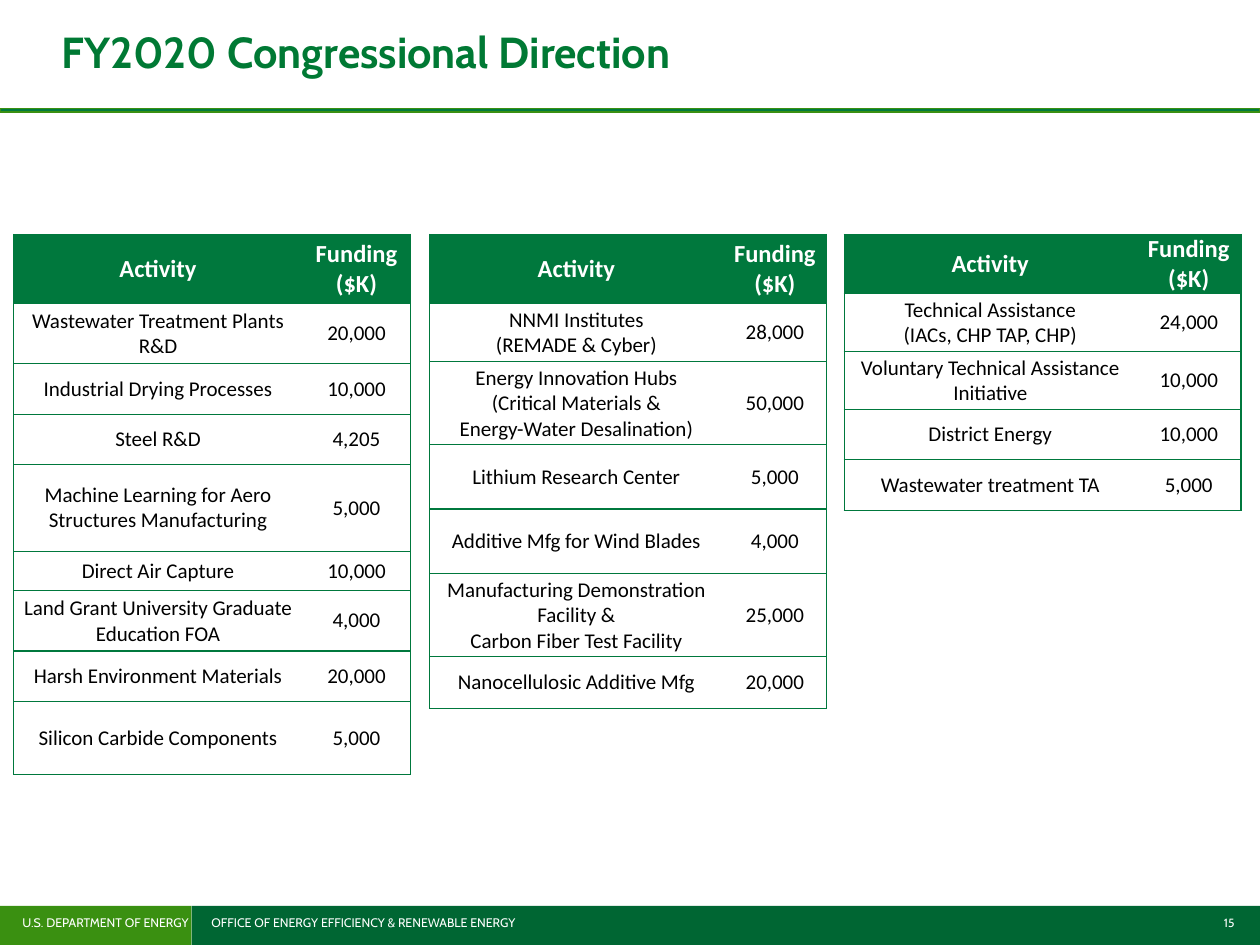
from lxml.etree import SubElement
from pptx import Presentation
from pptx.dml.color import RGBColor
from pptx.enum.shapes import MSO_SHAPE
from pptx.enum.text import MSO_ANCHOR, PP_ALIGN
from pptx.oxml.ns import qn
from pptx.util import Inches, Pt

WHITE = RGBColor(0xFF, 0xFF, 0xFF)
BLACK = RGBColor(0, 0, 0)
TITLE_GREEN = RGBColor(0x00, 0x79, 0x34)
TABLE_GREEN = RGBColor(0x00, 0x78, 0x3D)
RULE_GREEN = RGBColor(0x01, 0x7A, 0x3E)
DARK_GREEN = RGBColor(0x00, 0x66, 0x33)
LIGHT_GREEN = RGBColor(0x3A, 0x90, 0x11)

HEADER = ("Activity", "Funding\n($K)")
# Each table: left, column widths, header margins, body margins, header height, rows
TABLES = [
    (0.11, (2.29, 0.86), (0.08, 0.04), (0.08, 0.04), 0.53, [
        ("Wastewater Treatment Plants R&D", "20,000", 0.48),
        ("Industrial Drying Processes", "10,000", 0.4),
        ("Steel R&D", "4,205", 0.4),
        ("Machine Learning for Aero Structures Manufacturing", "5,000", 0.69),
        ("Direct Air Capture", "10,000", 0.31),
        ("Land Grant University Graduate Education FOA", "4,000", 0.48),
        ("Harsh Environment Materials", "20,000", 0.4),
        ("Silicon Carbide Components", "5,000", 0.58),
    ]),
    (3.41, (2.33, 0.82), (0, 0), (0.06, 0.03), 0.55, [
        ("NNMI Institutes\n(REMADE & Cyber)", "28,000", 0.46),
        ("Energy Innovation Hubs\n(Critical Materials &\nEnergy-Water Desalination)", "50,000", 0.66),
        ("Lithium Research Center", "5,000", 0.51),
        ("Additive Mfg for Wind Blades", "4,000", 0.51),
        ("Manufacturing Demonstration Facility &\nCarbon Fiber Test Facility", "25,000", 0.66),
        ("Nanocellulosic Additive Mfg", "20,000", 0.41),
    ]),
    (6.7, (2.32, 0.83), (0, 0), (0.06, 0.03), 0.47, [
        ("Technical Assistance\n(IACs, CHP TAP, CHP)", "24,000", 0.46),
        ("Voluntary Technical Assistance\nInitiative", "10,000", 0.46),
        ("District Energy", "10,000", 0.4),
        ("Wastewater treatment TA", "5,000", 0.4),
    ]),
]


def add_label(text, left, top, width, height, size, color):
    box = slide.shapes.add_textbox(Inches(left), Inches(top), Inches(width), Inches(height))
    frame = box.text_frame
    frame.word_wrap = True
    frame.text = text
    font = frame.paragraphs[0].runs[0].font
    font.name, font.size, font.color.rgb = "Cabin", Pt(size), color
    return frame


def set_borders(cell, visible_sides):
    """Line the given sides (from L, R, T, B) and clear the others; call before filling."""
    properties = cell._tc.get_or_add_tcPr()
    for side in "LRTB":
        line = SubElement(properties, qn(f"a:ln{side}"), w=str(Pt(0.75)))
        if side in visible_sides:
            fill = SubElement(line, qn("a:solidFill"))
            SubElement(fill, qn("a:srgbClr"), val=str(TABLE_GREEN))
        else:
            SubElement(line, qn("a:noFill"))


prs = Presentation()
prs.slide_width, prs.slide_height = Inches(10), Inches(7.5)
slide = prs.slides.add_slide(prs.slide_layouts[6])

# Footer bands and the rule under the title
for left, top, width, height, color, outline in [
    (1.52, 7.19, 8.48, 0.31, DARK_GREEN, None),
    (0, 7.19, 1.52, 0.31, LIGHT_GREEN, None),
    (0, 0.86, 10, 0.03, RULE_GREEN, LIGHT_GREEN),
]:
    band = slide.shapes.add_shape(
        MSO_SHAPE.RECTANGLE, Inches(left), Inches(top), Inches(width), Inches(height))
    band.shadow.inherit = False
    band.fill.solid()
    band.fill.fore_color.rgb = color
    if outline:
        band.line.color.rgb = outline
        band.line.width = Pt(0.75)
    else:
        band.line.fill.background()

page_number = add_label("15", 9.51, 7.22, 0.49, 0.26, 6.8, WHITE)
page_number.paragraphs[0].alignment = PP_ALIGN.CENTER
add_label("U.S. DEPARTMENT OF ENERGY", 0.08, 7.21, 1.6, 0.22, 7.1, WHITE)
add_label("OFFICE OF ENERGY EFFICIENCY & RENEWABLE ENERGY", 1.58, 7.21, 3.91, 0.22, 7.1, WHITE)

title = add_label("FY2020 Congressional Direction", 0.39, -0.04, 9.54, 0.89, 24.8, TITLE_GREEN)
title.vertical_anchor = MSO_ANCHOR.MIDDLE
title.paragraphs[0].runs[0].font.bold = True

for left, widths, header_margins, body_margins, header_height, activities in TABLES:
    rows = [(*HEADER, header_height), *activities]
    total_height = sum(row[-1] for row in rows)
    table = slide.shapes.add_table(
        len(rows), len(widths), Inches(left), Inches(1.86),
        Inches(sum(widths)), Inches(total_height)).table
    table.horz_banding = False
    for column, width in zip(table.columns, widths):
        column.width = Inches(width)

    for r, (*texts, height) in enumerate(rows):
        table.rows[r].height = Inches(height)
        is_header = r == 0
        side_margin, end_margin = header_margins if is_header else body_margins
        for c, text in enumerate(texts):
            cell = table.cell(r, c)
            set_borders(cell, "LTB" if c == 0 else "RTB")
            if is_header:
                cell.fill.solid()
                cell.fill.fore_color.rgb = TABLE_GREEN
            else:
                cell.fill.background()
            cell.margin_left = cell.margin_right = Inches(side_margin)
            cell.margin_top = cell.margin_bottom = Inches(end_margin)
            cell.vertical_anchor = MSO_ANCHOR.MIDDLE
            cell.text_frame.text = text
            for paragraph in cell.text_frame.paragraphs:
                paragraph.alignment = PP_ALIGN.CENTER
                font = paragraph.runs[0].font
                font.name, font.bold = "Calibri", is_header
                font.size = Pt(14 if is_header else 12)
                font.color.rgb = WHITE if is_header else BLACK

prs.save("out.pptx")
